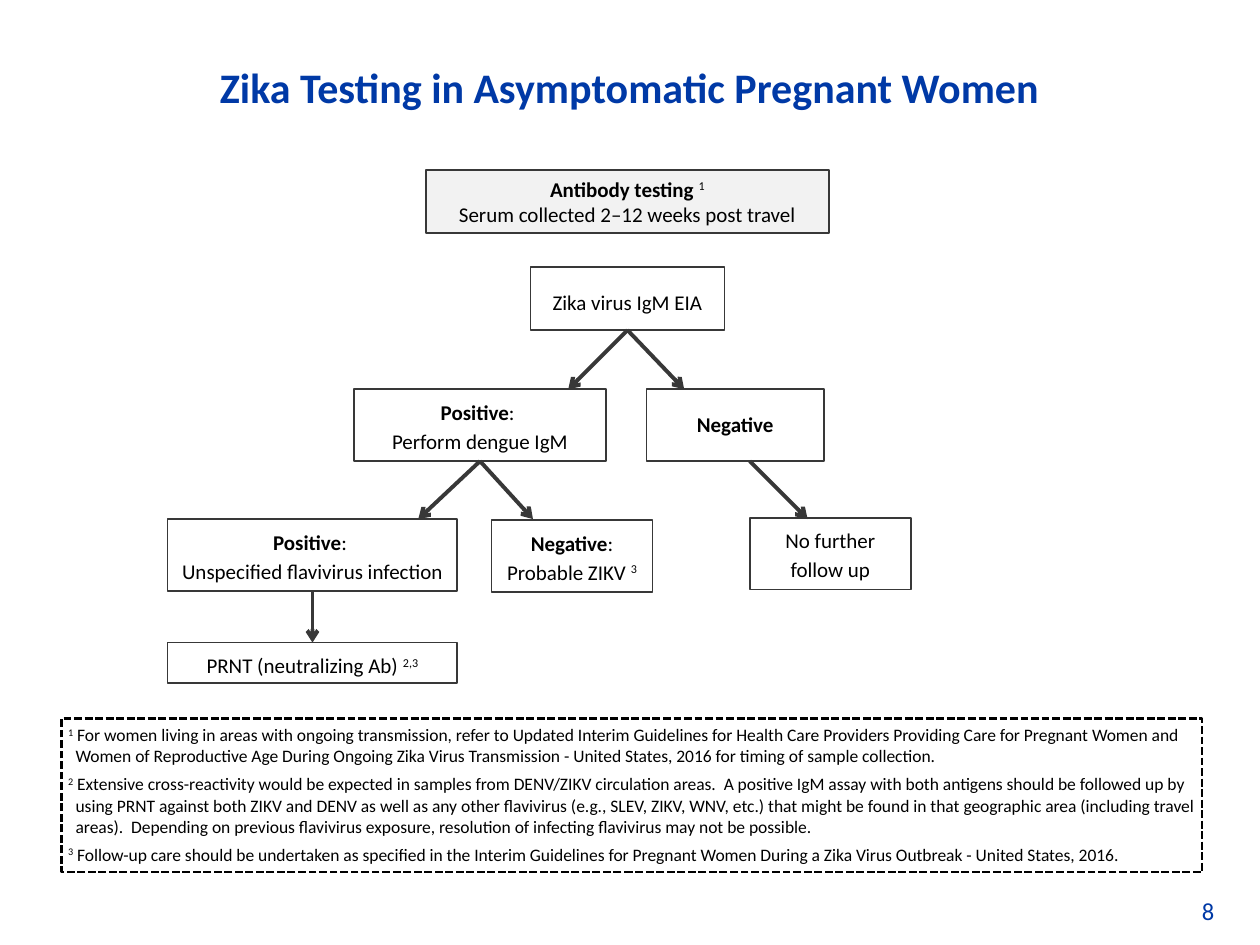
import dataclasses
import typing

import lxml.etree
import pptx
import pptx.dml.color
import pptx.enum.dml
import pptx.enum.shapes
import pptx.enum.text
import pptx.oxml.ns
import pptx.util

RGB = pptx.dml.color.RGBColor
BLUE = RGB(0x00, 0x39, 0xA6)
BLACK = RGB(0x00, 0x00, 0x00)
WHITE = RGB(0xFF, 0xFF, 0xFF)
GREY = RGB(0x38, 0x38, 0x38)
PALE = RGB(0xF2, 0xF2, 0xF2)

ALIGN = pptx.enum.text.PP_ALIGN
ANCHOR = pptx.enum.text.MSO_ANCHOR
FONT = "Calibri"
COLS, ROWS = 100, 75
WIDE, HIGH = pptx.util.Inches(10), pptx.util.Inches(7.5)
BOTTOM, TOP = 2, 0


class Run(typing.NamedTuple):
    text: str
    bold: bool = False
    sup: bool = False


Lines = list[list[Run]]


@dataclasses.dataclass
class Box:
    """A framed text; place and size are in grid columns and rows."""
    col: float
    row: float
    wide: float
    high: float
    lines: Lines
    fill: RGB | None = WHITE
    edge: RGB = GREY
    width: float = 1
    size: float = 12
    inset: float = 0.05
    pitch: float = 1.15
    note: bool = False


@dataclasses.dataclass
class Arrow:
    """Ends are grid points; start and end may name boxes to join."""
    tail: tuple[float, float]
    head: tuple[float, float]
    start: str | None = None
    end: str | None = None


def bold(text: str) -> Run:
    return Run(text, bold=True)


def sup(text: str) -> Run:
    return Run(text, sup=True)


BOXES = {
    "serum": Box(33.8, 13.5, 32, 5,
                 [[bold("Antibody testing "), sup("1")],
                  [Run("Serum collected 2–12 weeks post travel")]],
                 fill=PALE, width=1.5, pitch=1),
    "eia": Box(42.1, 21.2, 15.4, 5, [[Run("Zika virus IgM EIA")]], inset=0.15),
    "dengue": Box(28.1, 30.9, 20, 5.7,
                  [[bold("Positive"), Run(": ")], [Run("Perform dengue IgM")]]),
    "clear": Box(51.3, 30.9, 14.1, 5.7, [[bold("Negative")]], inset=0.15),
    "flavi": Box(13.3, 41.2, 23, 5.7,
                 [[bold("Positive"), Run(": ")],
                  [Run("Unspecified flavivirus infection")]]),
    "zikv": Box(39, 41.3, 12.8, 5.7,
                [[bold("Negative"), Run(":")],
                 [Run("Probable ZIKV "), sup("3")]]),
    "done": Box(59.5, 41.1, 12.8, 5.7, [[Run("No further")], [Run("follow up")]]),
    "prnt": Box(13.3, 51, 23, 3.2, [[Run("PRNT (neutralizing Ab) "), sup("2,3")]]),
    "notes": Box(
        4.9, 57, 90.5, 12.2,
        [[sup("1"), Run(
            " For women living in areas with ongoing transmission, refer to Updated "
            "Interim Guidelines for Health Care Providers Providing Care for Pregnant "
            "Women and Women of Reproductive Age During Ongoing Zika Virus "
            "Transmission - United States, 2016 for timing of sample collection.")],
         [sup("2"), Run(
             " Extensive cross-reactivity would be expected in samples from DENV/ZIKV "
             "circulation areas.  A positive IgM assay with both antigens should be "
             "followed up by using PRNT against both ZIKV and DENV as well as any other "
             "flavivirus (e.g., SLEV, ZIKV, WNV, etc.) that might be found in that "
             "geographic area (including travel areas).  Depending on previous "
             "flavivirus exposure, resolution of infecting flavivirus may not be "
             "possible.")],
         [sup("3"), Run(
             " Follow-up care should be undertaken as specified in the Interim "
             "Guidelines for Pregnant Women During a Zika Virus Outbreak - United "
             "States, 2016.")]],
        fill=None, edge=BLACK, width=1.5, size=10, pitch=1, note=True),
}

ARROWS = [
    Arrow((49.7, 26.3), (45.1, 30.9), "eia"),
    Arrow((49.7, 26.3), (54.3, 30.9), "eia"),
    Arrow((37.8, 36.6), (33.2, 41.2), "dengue"),
    Arrow((37.8, 36.6), (42.3, 41.2), "dengue"),
    Arrow((59.5, 36.6), (64.1, 41.2)),
    Arrow((24.9, 46.9), (24.9, 50.9), "flavi", "prnt"),
]


def across(col: float) -> int:
    return round(WIDE * col / COLS)


def down(row: float) -> int:
    return round(HIGH * row / ROWS)


def write(para, run: Run, size: float, color: RGB) -> None:
    piece = para.add_run()
    piece.text = run.text
    font = piece.font
    font.name, font.size, font.bold = FONT, pptx.util.Pt(size), run.bold
    font.color.rgb = color
    if run.sup:
        piece._r.get_or_add_rPr().set("baseline", "30000")


def draw_box(slide, box: Box):
    shape = slide.shapes.add_shape(
        pptx.enum.shapes.MSO_SHAPE.RECTANGLE,
        across(box.col), down(box.row), across(box.wide), down(box.high))
    shape.shadow.inherit = False
    if box.fill is None:
        shape.fill.background()
    else:
        shape.fill.solid()
        shape.fill.fore_color.rgb = box.fill
    shape.line.color.rgb = box.edge
    shape.line.width = pptx.util.Pt(box.width)
    if box.note:
        shape.line.dash_style = pptx.enum.dml.MSO_LINE.SQUARE_DOT
    frame = shape.text_frame
    frame.word_wrap = True
    frame.vertical_anchor = ANCHOR.TOP
    frame.margin_left = frame.margin_right = pptx.util.Inches(0.05)
    frame.margin_bottom = pptx.util.Inches(0.05)
    frame.margin_top = pptx.util.Inches(box.inset)
    for rank, line in enumerate(box.lines):
        para = frame.add_paragraph() if rank else frame.paragraphs[0]
        para.alignment = ALIGN.LEFT if box.note else ALIGN.CENTER
        para.line_spacing = box.pitch
        if box.note:
            hang = pptx.util.Inches(0.06)
            props = para._p.get_or_add_pPr()
            props.set("marL", str(hang))
            props.set("indent", str(-hang))
            para.space_before = pptx.util.Pt(4 if rank else 0)
        for run in line:
            write(para, run, box.size, BLACK)
    return shape


def draw_arrow(slide, arrow: Arrow, shapes: dict) -> None:
    line = slide.shapes.add_connector(
        pptx.enum.shapes.MSO_CONNECTOR.STRAIGHT,
        across(arrow.tail[0]), down(arrow.tail[1]),
        across(arrow.head[0]), down(arrow.head[1]))
    if arrow.start:
        line.begin_connect(shapes[arrow.start], BOTTOM)
    if arrow.end:
        line.end_connect(shapes[arrow.end], TOP)
    line.line.color.rgb = GREY
    line.line.width = pptx.util.Pt(2.25)
    tip = pptx.oxml.ns.qn("a:tailEnd")
    lxml.etree.SubElement(line.line._get_or_add_ln(), tip, type="arrow")
    lxml.etree.SubElement(line._element.spPr, pptx.oxml.ns.qn("a:effectLst"))


def main() -> None:
    deck = pptx.Presentation()
    deck.slide_width, deck.slide_height = WIDE, HIGH
    slide = deck.slides.add_slide(deck.slide_layouts[5])

    title = slide.shapes.title
    title.left, title.top = across(4.9), down(3.2)
    title.width, title.height = across(90.1), down(7.4)
    title.text_frame.vertical_anchor = ANCHOR.MIDDLE
    head = title.text_frame.paragraphs[0]
    head.alignment = ALIGN.CENTER
    write(head, bold("Zika Testing in Asymptomatic Pregnant Women"), 24, BLUE)

    shapes = {name: draw_box(slide, box) for name, box in BOXES.items()}
    for arrow in ARROWS:
        draw_arrow(slide, arrow, shapes)

    page = slide.shapes.add_textbox(across(94.4), down(70.6), across(4.3), down(3.4))
    page.text_frame.word_wrap = False
    write(page.text_frame.paragraphs[0], Run("8"), 14, BLUE)
    deck.save("out.pptx")


if __name__ == "__main__":
    main()
